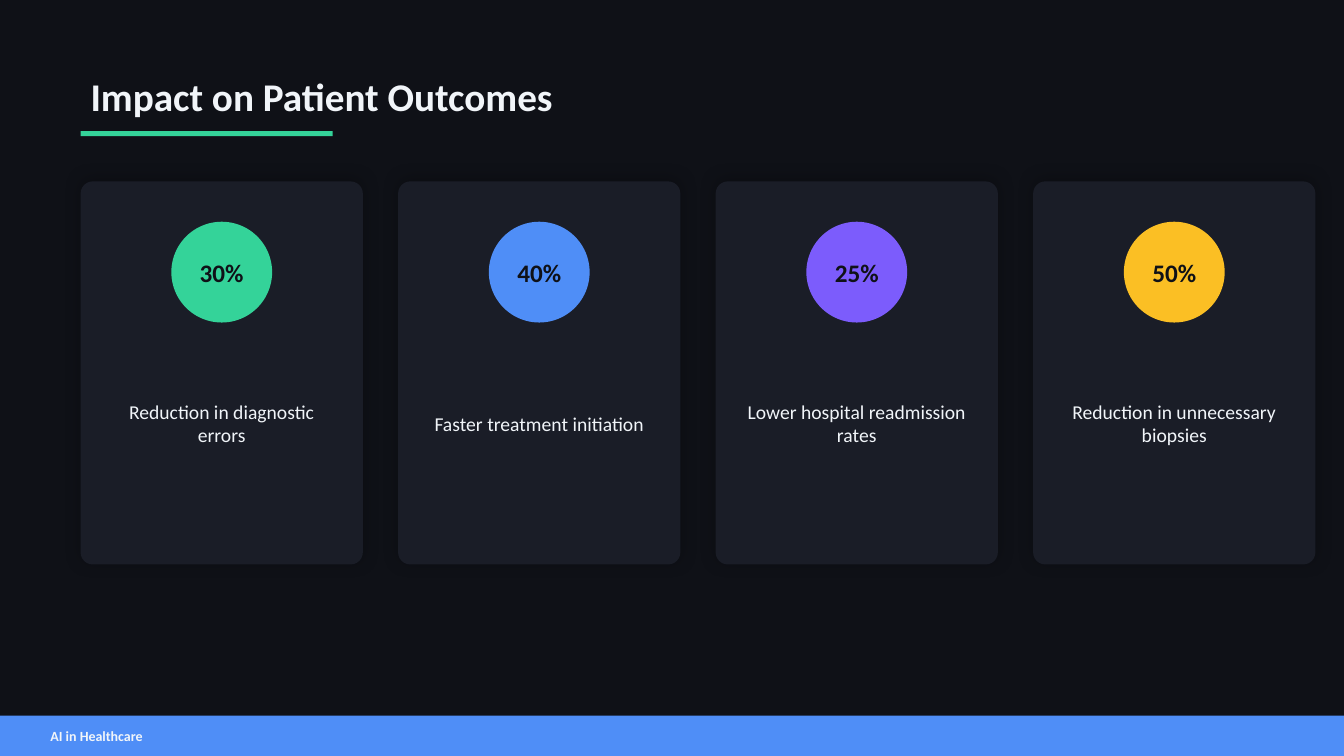
from dataclasses import dataclass

from pptx import Presentation
from pptx.dml.color import RGBColor
from pptx.enum.shapes import MSO_SHAPE
from pptx.enum.text import MSO_ANCHOR, PP_ALIGN
from pptx.oxml import parse_xml
from pptx.oxml.ns import nsdecls, qn
from pptx.util import Pt

RECT = MSO_SHAPE.RECTANGLE
ROUND = MSO_SHAPE.ROUNDED_RECTANGLE
OVAL = MSO_SHAPE.OVAL
MIDDLE = MSO_ANCHOR.MIDDLE
LEFT = PP_ALIGN.LEFT
CENTER = PP_ALIGN.CENTER


@dataclass(frozen=True)
class Theme:
    font: str = "Calibri"
    back: str = "0F1117"
    card: str = "1A1D27"
    light: str = "F1F5F9"
    green: str = "34D399"
    blue: str = "4F8EF7"
    violet: str = "7C5CFC"
    amber: str = "FBBF24"
    title: int = 28
    value: int = 18
    body: int = 14
    small: int = 10


THEME = Theme()

STATS = [
    ("30%", "Reduction in diagnostic errors", THEME.green),
    ("40%", "Faster treatment initiation", THEME.blue),
    ("25%", "Lower hospital readmission rates", THEME.violet),
    ("50%", "Reduction in unnecessary biopsies", THEME.amber),
]


def add_block(slide, kind, left, top, width, height, color):
    block = slide.shapes.add_shape(kind, Pt(left), Pt(top), Pt(width), Pt(height))
    block.shadow.inherit = False
    block.fill.solid()
    block.fill.fore_color.rgb = RGBColor.from_string(color)
    block.line.fill.background()
    return block


def add_label(slide, left, top, width, height):
    return slide.shapes.add_textbox(Pt(left), Pt(top), Pt(width), Pt(height))


def write(shape, text, size, color, bold=False, align=LEFT):
    frame = shape.text_frame
    frame.text = text
    frame.word_wrap = True
    frame.vertical_anchor = MIDDLE
    line = frame.paragraphs[0]
    line.alignment = align
    font = line.runs[0].font
    font.name = THEME.font
    font.size = Pt(size)
    font.bold = bold
    font.color.rgb = RGBColor.from_string(color)


def add_shadow(shape):
    effects = shape._element.spPr.find(qn("a:effectLst"))
    effects.append(parse_xml(
        f'<a:outerShdw {nsdecls("a")} blurRad="{Pt(12)}" dist="{Pt(2)}" '
        'dir="16200000" algn="ctr" rotWithShape="0">'
        '<a:srgbClr val="000000"><a:alpha val="25000"/></a:srgbClr>'
        '</a:outerShdw>'))


def add_header(slide, left, top, width, height):
    title = add_label(slide, left, top, width, height)
    write(title, "Impact on Patient Outcomes", THEME.title, THEME.light, bold=True)
    add_block(slide, RECT, left, top + 57.6, 180, 3.6, THEME.green)


def add_card(slide, left, top, width, height, stat):
    value, note, color = stat
    card = add_block(slide, ROUND, left, top, width, height, THEME.card)
    card.adjustments[0] = 0.043
    add_shadow(card)

    size = 72
    badge = add_block(slide, OVAL, left + (width - size) / 2, top + 28.8,
                      size, size, color)
    frame = badge.text_frame
    frame.margin_left = frame.margin_right = 0
    write(badge, value, THEME.value, THEME.back, bold=True, align=CENTER)

    inset = 14.4
    label = add_label(slide, left + inset, top + 129.6, width - 2 * inset, 86.4)
    write(label, note, THEME.body, THEME.light, align=CENTER)


def add_cards(slide, left, top, width, height, gap):
    for index, stat in enumerate(STATS):
        add_card(slide, left + index * (width + gap), top, width, height, stat)


def add_footer(slide, left, top, width, height):
    bar = add_block(slide, RECT, left, top, width, height, THEME.blue)
    bar.text_frame.margin_left = Pt(36)
    write(bar, "AI in Healthcare", THEME.small, THEME.light, bold=True)


def main():
    deck = Presentation()
    deck.slide_width = Pt(960)
    deck.slide_height = Pt(540)
    slide = deck.slides.add_slide(deck.slide_layouts[6])
    fill = slide.background.fill
    fill.solid()
    fill.fore_color.rgb = RGBColor.from_string(THEME.back)

    add_header(slide, 57.6, 36, 720, 64.8)
    add_cards(slide, 57.6, 129.6, 201.6, 273.6, 25.2)
    add_footer(slide, 0, 511.2, 960, 28.8)
    deck.save("out.pptx")


if __name__ == "__main__":
    main()
